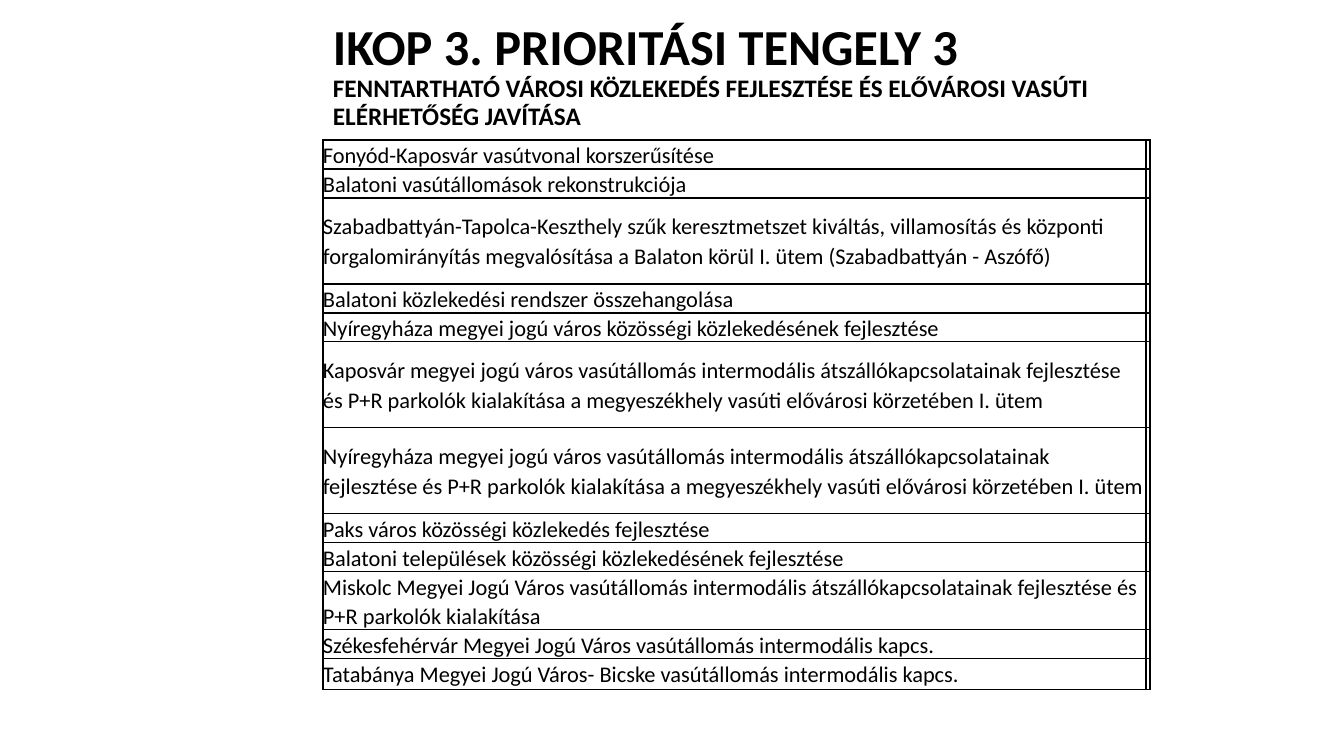
from lxml import etree
from pptx import Presentation
from pptx import util as u
from pptx.dml.color import RGBColor
from pptx.enum import text
from pptx.oxml.ns import qn

PX = 914400 / 100.8
HUES = {"ink": "000000", "paper": "FFFFFF"}
FONT = "Calibri"


def px(n):
    """Turn px into EMU."""
    return u.Emu(round(n * PX))


def put(para, words, size, bold=False):
    """Add one run to a paragraph."""
    run = para.add_run()
    run.text = words
    run.font.name = FONT
    run.font.size = u.Pt(size)
    run.font.bold = bold
    run.font.color.rgb = RGBColor.from_string(HUES["ink"])


prs = Presentation()
prs.slide_width, prs.slide_height = px(1344), px(756)
slide = prs.slides.add_slide(prs.slide_layouts[6])

# Title
title = slide.shapes.add_textbox(px(323), px(13), px(827), px(126)).text_frame
title.word_wrap = True
title.vertical_anchor = text.MSO_ANCHOR.MIDDLE
para = title.paragraphs[0]
para.line_spacing = 0.9
put(para, "IKOP 3. PRIORITÁSI TENGELY 3", 36, True)
para.add_line_break()
put(para, "FENNTARTHATÓ VÁROSI KÖZLEKEDÉS FEJLESZTÉSE ÉS ELŐVÁROSI VASÚTI "
    "ELÉRHETŐSÉG JAVÍTÁSA", 18, True)

# Projects: row height, name
projects = [
    (29, "Fonyód-Kaposvár vasútvonal korszerűsítése"),
    (29, "Balatoni vasútállomások rekonstrukciója"),
    (86, "Szabadbattyán-Tapolca-Keszthely szűk keresztmetszet kiváltás, "
         "villamosítás és központi forgalomirányítás megvalósítása a Balaton "
         "körül I. ütem (Szabadbattyán - Aszófő)"),
    (29, "Balatoni közlekedési rendszer összehangolása"),
    (29, "Nyíregyháza megyei jogú város közösségi közlekedésének fejlesztése"),
    (86, "Kaposvár megyei jogú város vasútállomás intermodális "
         "átszállókapcsolatainak fejlesztése és P+R parkolók kialakítása a "
         "megyeszékhely vasúti elővárosi körzetében I. ütem"),
    (86, "Nyíregyháza megyei jogú város vasútállomás intermodális "
         "átszállókapcsolatainak fejlesztése és P+R parkolók kialakítása a "
         "megyeszékhely vasúti elővárosi körzetében I. ütem"),
    (29, "Paks város közösségi közlekedés fejlesztése"),
    (29, "Balatoni települések közösségi közlekedésének fejlesztése"),
    (58, "Miskolc Megyei Jogú Város vasútállomás intermodális "
         "átszállókapcsolatainak fejlesztése és P+R parkolók kialakítása"),
    (29, "Székesfehérvár Megyei Jogú Város vasútállomás intermodális kapcs."),
    (31, "Tatabánya Megyei Jogú Város- Bicske vasútállomás intermodális kapcs."),
]
high = sum(row[0] for row in projects)
table = slide.shapes.add_table(len(projects), 2, px(323), px(140),
                               px(827), px(high)).table
table.first_row = table.horz_banding = False
for col, wide in zip(table.columns, (823, 4)):
    col.width = px(wide)

for row, (tall, name) in enumerate(projects):
    table.rows[row].height = px(tall)
    para = table.cell(row, 0).text_frame.paragraphs[0]
    para.line_spacing = 1.07
    put(para, name, 16)
    blank = table.cell(row, 1).text_frame.paragraphs[0]
    etree.SubElement(blank._p, qn("a:endParaRPr"), sz="800")

for cell in table.iter_cells():
    cell.margin_left = cell.margin_right = 0
    cell.margin_top = cell.margin_bottom = 0
    cell.vertical_anchor = text.MSO_ANCHOR.MIDDLE
    cell.fill.solid()
    cell.fill.fore_color.rgb = RGBColor.from_string(HUES["paper"])
    props = cell._tc.get_or_add_tcPr()
    for spot, side in enumerate("LRTB"):
        line = etree.Element(qn(f"a:ln{side}"), w=str(u.Pt(1)))
        fill = etree.SubElement(line, qn("a:solidFill"))
        etree.SubElement(fill, qn("a:srgbClr"), val=HUES["ink"])
        props.insert(spot, line)

prs.save("out.pptx")
